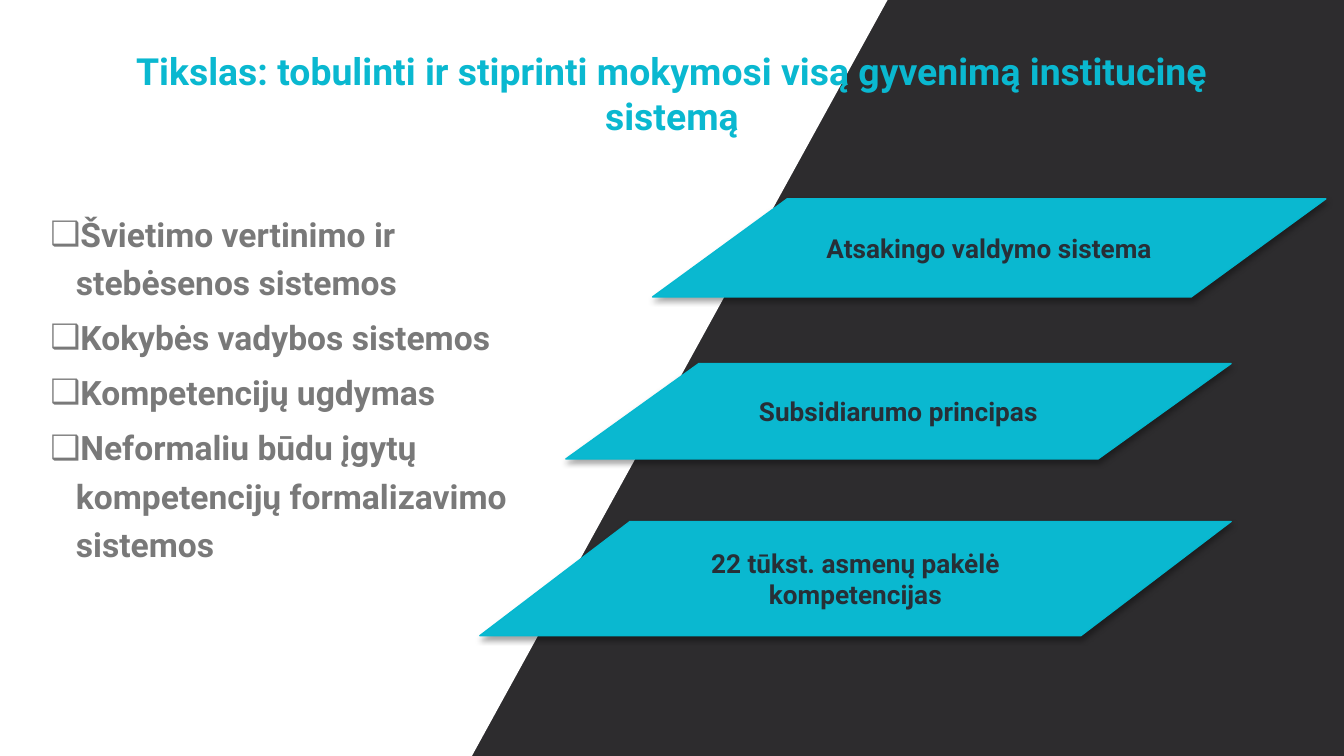
from dataclasses import dataclass

from lxml.etree import SubElement
from pptx import Presentation
from pptx.dml.color import RGBColor
from pptx.enum.shapes import MSO_SHAPE
from pptx.enum.text import MSO_ANCHOR, MSO_AUTO_SIZE, PP_ALIGN
from pptx.oxml.ns import qn
from pptx.util import Inches, Pt

CHARCOAL = RGBColor(0x2D, 0x2C, 0x2E)
WHITE = RGBColor(0xFF, 0xFF, 0xFF)
CYAN = RGBColor(0x0A, 0xB8, 0xD0)
CYAN_EDGE = RGBColor(0x05, 0xB8, 0xD0)
INK = RGBColor(0x27, 0x2F, 0x37)
GREY = RGBColor(0x79, 0x79, 0x79)
FONT = "Roboto"

# Grid of square cells, 100 columns by 56.25 rows
CELL = Inches(0.1)
COLUMNS, ROWS = 100, 56.25


@dataclass(frozen=True)
class Box:
    column: float
    row: float
    columns: float
    rows: float

    def lengths(self) -> tuple[int, ...]:
        return tuple(round(n * CELL) for n in
                     (self.column, self.row, self.columns, self.rows))


@dataclass(frozen=True)
class Banner:
    text: str
    box: Box


WHITE_SIDE_BOX = Box(-9.7, -11.5, 105.9, 105.9)
TITLE = "Tikslas: tobulinti ir stiprinti mokymosi visą gyvenimą institucinę sistemą"
TITLE_BOX = Box(5, 2.25, 90, 9.4)
SYSTEMS = [
    "Švietimo vertinimo ir stebėsenos sistemos",
    "Kokybės vadybos sistemos",
    "Kompetencijų ugdymas",
    "Neformaliu būdu įgytų kompetencijų formalizavimo sistemos",
]
SYSTEMS_BOX = Box(2.75, 14.8, 40.5, 31.7)
BANNERS = [
    Banner("Subsidiarumo principas", Box(42.1, 27.05, 49.5, 7.1)),
    Banner("Atsakingo valdymo sistema", Box(48.55, 14.8, 50.1, 7.3)),
    Banner("22 tūkst. asmenų pakėlė kompetencijas", Box(35.7, 38.8, 55.9, 8.5)),
]


def write(paragraph, text: str, *, size: float, color: RGBColor,
          align: PP_ALIGN = PP_ALIGN.LEFT) -> None:
    paragraph.alignment = align
    run = paragraph.add_run()
    run.text = text
    run.font.name = FONT
    run.font.size = Pt(size)
    run.font.bold = True
    run.font.color.rgb = color


def place(shape, box: Box) -> None:
    shape.left, shape.top, shape.width, shape.height = box.lengths()


def add_bullet(paragraph, mark: str) -> None:
    properties = paragraph._p.get_or_add_pPr()
    properties.set("marL", str(Inches(0.19)))
    properties.set("indent", str(-Inches(0.19)))
    SubElement(properties, qn("a:buChar"), char=mark)


def add_shadow(shape) -> None:
    effects = shape._element.spPr.find(qn("a:effectLst"))
    shadow = SubElement(effects, qn("a:outerShdw"), blurRad=str(Pt(3.1)),
                        dist=str(Pt(1.8)), dir="5400000", rotWithShape="0")
    black = SubElement(shadow, qn("a:srgbClr"), val="000000")
    SubElement(black, qn("a:alpha"), val="35000")


def draw_filled(slide, preset: MSO_SHAPE, box: Box, fill: RGBColor):
    shape = slide.shapes.add_shape(preset, *box.lengths())
    shape.shadow.inherit = False
    shape.fill.solid()
    shape.fill.fore_color.rgb = fill
    return shape


def draw_white_side(slide) -> None:
    side = draw_filled(slide, MSO_SHAPE.RIGHT_TRIANGLE, WHITE_SIDE_BOX, WHITE)
    side.line.fill.background()
    side.rotation = 343.8
    side._element.spPr.xfrm.set("flipV", "1")


def draw_banner(slide, banner: Banner) -> None:
    shape = draw_filled(slide, MSO_SHAPE.FLOWCHART_DATA, banner.box, CYAN)
    shape.line.color.rgb = CYAN_EDGE
    shape.line.width = Pt(0.75)
    add_shadow(shape)
    frame = shape.text_frame
    frame.word_wrap = True
    frame.vertical_anchor = MSO_ANCHOR.MIDDLE
    write(frame.paragraphs[0], banner.text, size=14, color=INK, align=PP_ALIGN.CENTER)


def fill_title(title) -> None:
    place(title, TITLE_BOX)
    frame = title.text_frame
    frame.auto_size = MSO_AUTO_SIZE.NONE
    frame.vertical_anchor = MSO_ANCHOR.MIDDLE
    frame.margin_left = frame.margin_right = Inches(0.07)
    frame.margin_top = frame.margin_bottom = Inches(0.04)
    write(frame.paragraphs[0], TITLE, size=20, color=CYAN, align=PP_ALIGN.CENTER)


def fill_systems(body) -> None:
    place(body, SYSTEMS_BOX)
    frame = body.text_frame
    frame.auto_size = MSO_AUTO_SIZE.NONE
    frame.vertical_anchor = MSO_ANCHOR.TOP
    for index, system in enumerate(SYSTEMS):
        paragraph = frame.add_paragraph() if index else frame.paragraphs[0]
        paragraph.line_spacing = 1.2
        paragraph.space_before = Pt(3.6)
        add_bullet(paragraph, "❑")
        write(paragraph, system, size=18, color=GREY)


def main() -> None:
    deck = Presentation()
    deck.slide_width, deck.slide_height = COLUMNS * CELL, round(ROWS * CELL)
    slide = deck.slides.add_slide(deck.slide_layouts[1])
    title, body = slide.placeholders

    # Background: dark slide with a slanted white side behind the text
    slide.background.fill.solid()
    slide.background.fill.fore_color.rgb = CHARCOAL
    draw_white_side(slide)

    # Title, banners and list, from back to front
    slide.shapes._spTree.append(title._element)
    fill_title(title)
    for banner in BANNERS:
        draw_banner(slide, banner)
    slide.shapes._spTree.append(body._element)
    fill_systems(body)

    deck.save("out.pptx")


if __name__ == "__main__":
    main()
